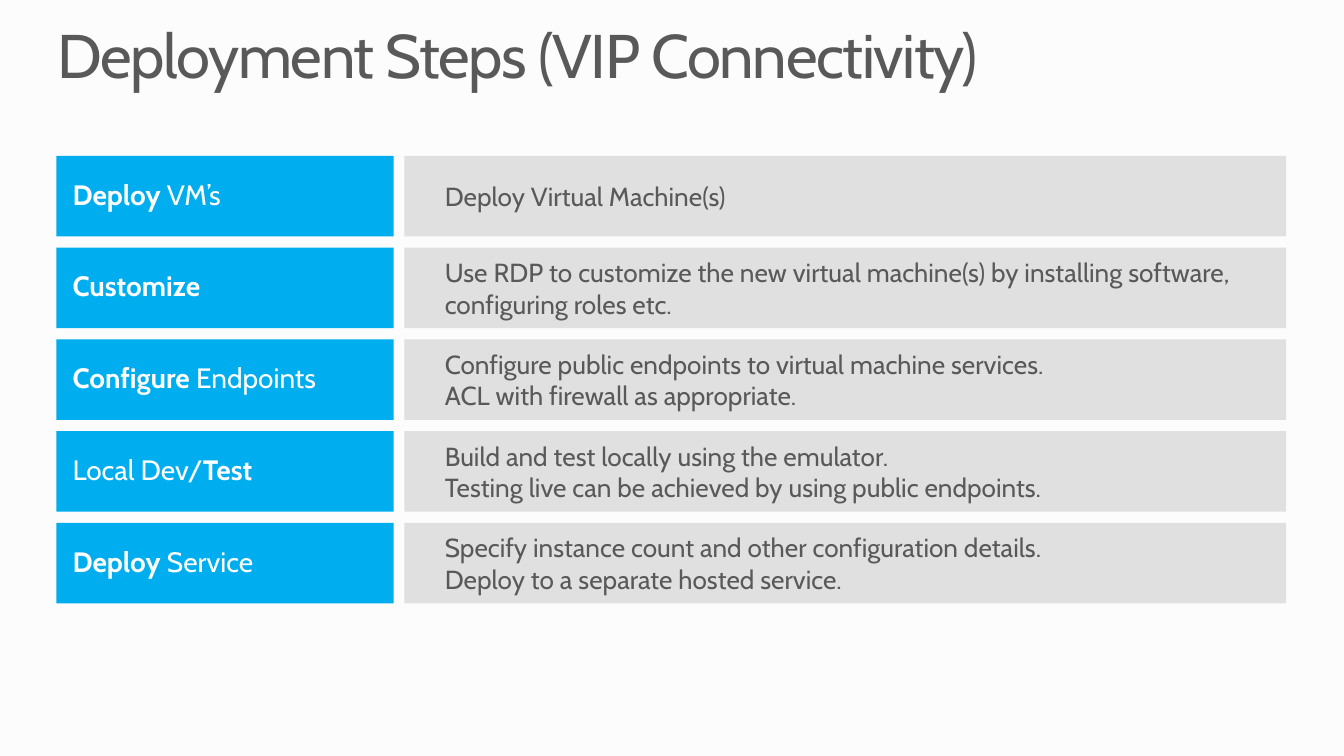
from dataclasses import dataclass

from lxml.etree import SubElement
from pptx import Presentation
from pptx.dml.color import RGBColor as Rgb
from pptx.enum.shapes import MSO_SHAPE as Preset
from pptx.enum.text import MSO_ANCHOR as Anchor, PP_ALIGN as Align
from pptx.oxml.ns import qn
from pptx.util import Inches, Pt


@dataclass(frozen=True)
class Theme:
    font: str = "Cabin"
    page: str = "FCFCFC"
    ink: str = "595959"
    accent: str = "00AEEF"
    on_accent: str = "FFFFFF"
    panel: str = "DDDDDD"
    panel_opacity: int = 90
    title_size: int = 33
    label_size: int = 15
    detail_size: int = 14


@dataclass(frozen=True)
class Span:
    text: str
    bold: bool = False


@dataclass(frozen=True)
class Step:
    label: tuple[Span, ...]
    detail: tuple[str, ...]


@dataclass(frozen=True)
class Column:
    left: float
    width: float
    insets: tuple[float, float, float, float]  # left, top, right, bottom


THEME = Theme()

# Grid, in inches, on a 16:9 page
SLIDE_WIDTH = 10
SLIDE_HEIGHT = SLIDE_WIDTH * 9 / 16
FIRST_ROW, LAST_ROW, ROW_HEIGHT = 1.16, 3.89, 0.6
LABELS = Column(0.42, 2.51, (0.12, 0.08, 0.12, 0.08))
DETAILS = Column(3.01, 6.56, (0.3, 0.04, 0.08, 0.04))

STEPS = (
    Step((Span("Deploy", True), Span(" VM’s")),
         ("Deploy Virtual Machine(s)",)),
    Step((Span("Customize", True),),
         ("Use RDP to customize the new virtual machine(s) by installing "
          "software, configuring roles etc.",)),
    Step((Span("Configure", True), Span(" Endpoints")),
         ("Configure public endpoints to virtual machine services.",
          "ACL with firewall as appropriate.")),
    Step((Span("Local Dev/"), Span("Test", True)),
         ("Build and test locally using the emulator.",
          "Testing live can be achieved by using public endpoints.")),
    Step((Span("Deploy", True), Span(" Service")),
         ("Specify instance count and other configuration details.",
          "Deploy to a separate hosted service.")),
)
ROW_PITCH = (LAST_ROW - FIRST_ROW) / (len(STEPS) - 1)


def set_frame(box, insets: tuple[float, float, float, float], anchor):
    """Wrap the box's text, set its insets and return its first paragraph."""
    frame = box.text_frame
    frame.word_wrap = True
    frame.vertical_anchor = anchor
    (frame.margin_left, frame.margin_top,
     frame.margin_right, frame.margin_bottom) = map(Inches, insets)
    para = frame.paragraphs[0]
    para.alignment = Align.LEFT
    return para


def add_span(para, text: str, size: int, color: str, bold: bool = False):
    span = para.add_run()
    span.text = text
    span.font.name = THEME.font
    span.font.size = Pt(size)
    span.font.bold = bold
    span.font.color.rgb = Rgb.from_string(color)
    return span


def add_cell(page, column: Column, row: int, color: str, opacity: int = 100):
    """Draw one filled cell of the grid and return its paragraph."""
    box = page.shapes.add_shape(
        Preset.RECTANGLE, Inches(column.left),
        Inches(FIRST_ROW + row * ROW_PITCH),
        Inches(column.width), Inches(ROW_HEIGHT))
    box.shadow.inherit = False
    box.line.fill.background()
    box.fill.solid()
    box.fill.fore_color.rgb = Rgb.from_string(color)
    if opacity < 100:
        tint = box.fill._xPr.find(qn("a:solidFill"))[0]
        SubElement(tint, qn("a:alpha")).set("val", str(opacity * 1000))
    return set_frame(box, column.insets, Anchor.MIDDLE)


def add_title(page, text: str) -> None:
    box = page.shapes.add_textbox(
        Inches(0.43), Inches(0.19), Inches(9.15), Inches(0.5))
    para = set_frame(box, (0, 0, 0, 0), Anchor.TOP)
    para.line_spacing = 0.9
    span = add_span(para, text, THEME.title_size, THEME.ink)
    span.font._element.set("spc", "-75")  # tighter letter spacing


def add_step(page, row: int, step: Step) -> None:
    # Grey description
    para = add_cell(page, DETAILS, row, THEME.panel, THEME.panel_opacity)
    for index, line in enumerate(step.detail):
        if index:
            para.add_line_break()
        add_span(para, line, THEME.detail_size, THEME.ink)

    # Blue label
    para = add_cell(page, LABELS, row, THEME.accent)
    para.line_spacing = 0.9
    for part in step.label:
        add_span(para, part.text, THEME.label_size, THEME.on_accent, part.bold)


def main() -> None:
    deck = Presentation()
    deck.slide_width = Inches(SLIDE_WIDTH)
    deck.slide_height = Inches(SLIDE_HEIGHT)
    page = deck.slides.add_slide(deck.slide_layouts[6])
    page.background.fill.solid()
    page.background.fill.fore_color.rgb = Rgb.from_string(THEME.page)

    add_title(page, "Deployment Steps (VIP Connectivity)")
    for row, step in enumerate(STEPS):
        add_step(page, row, step)

    deck.save("out.pptx")


if __name__ == "__main__":
    main()
